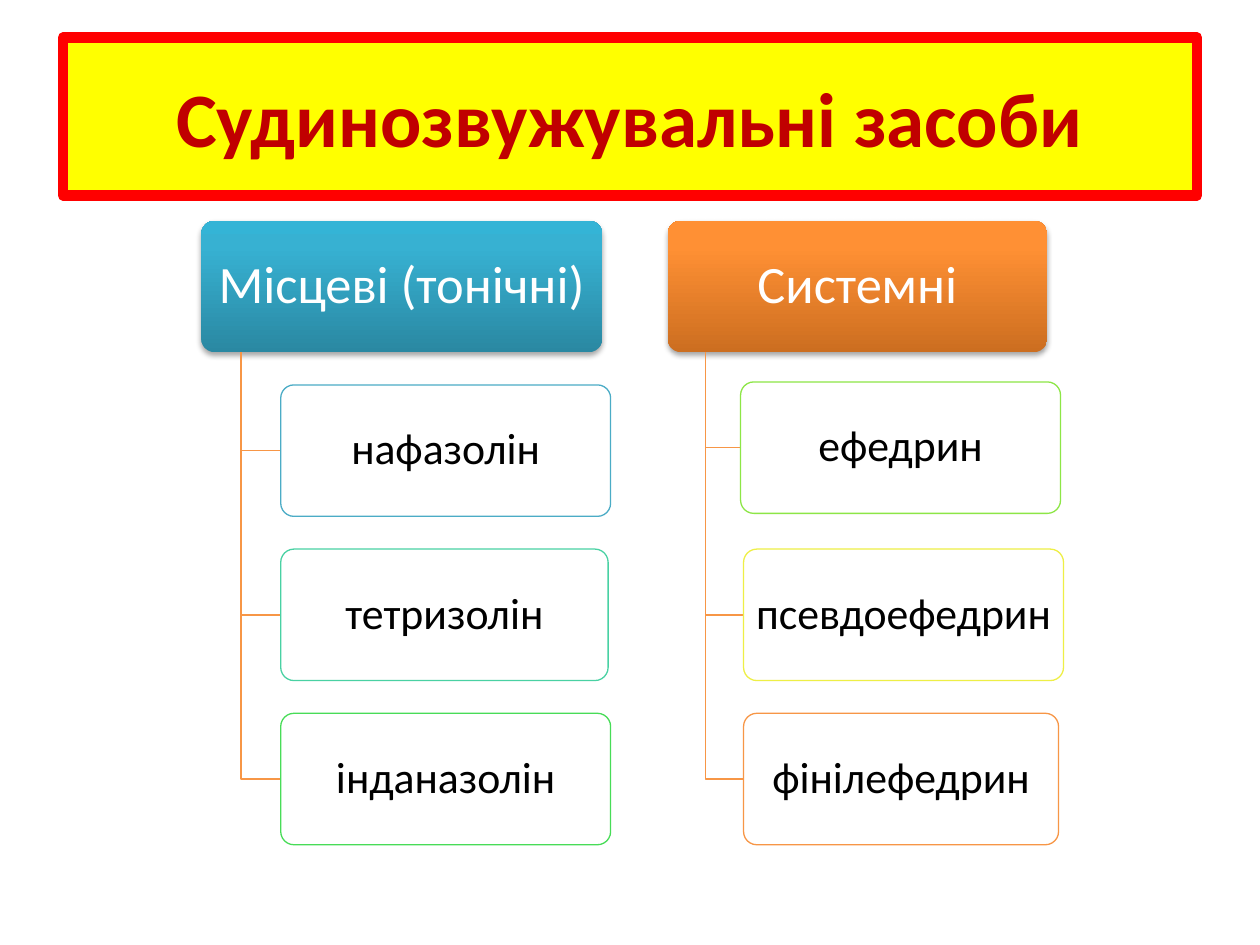
import copy

import pptx
import pptx.dml.color
import pptx.enum.shapes
import pptx.enum.text
import pptx.oxml
import pptx.oxml.ns
import pptx.util
from pptx.util import Cm, Pt

COLORS = {
    "title fill": "FFFF00", "title line": "FF0000", "title text": "C00000",
    "white": "FFFFFF", "black": "000000", "branch": "F79646",
}
HEAD_TOP, BOX_HEIGHT, PITCH = 4.45, 2.65, 3.31

# Child rows: name, outline, left, width, vertical shift
GROUPS = [
    {"name": "Місцеві (тонічні)", "left": 4.06, "width": 8.08, "trunk": 4.86,
     "gradient": [(0, "2A88A2"), (0.8, "37B1D2"), (1, "34B4D6")],
     "children": [("нафазолін", "4BACC6", 5.66, 6.65, 0),
                  ("тетризолін", "49D1A3", 5.66, 6.6, 0),
                  ("інданазолін", "47DC57", 5.66, 6.65, 0)]},
    {"name": "Системні", "left": 13.46, "width": 7.65, "trunk": 14.22,
     "gradient": [(0, "CC6E20"), (0.8, "FF9034"), (1, "FF9136")],
     "children": [("ефедрин", "8DE646", 14.93, 6.45, -0.06),
                  ("псевдоефедрин", "EEEF46", 14.99, 6.45, 0),
                  ("фінілефедрин", "F79646", 14.99, 6.35, 0)]},
]
SHADOW = (
    '<a:outerShdw xmlns:a="http://schemas.openxmlformats.org/drawingml/2006/main"'
    ' blurRad="40000" dist="23000" dir="5400000" rotWithShape="0">'
    '<a:srgbClr val="000000"><a:alpha val="35000"/></a:srgbClr></a:outerShdw>'
)


def write_text(shape, text, size, color, bold=False):
    frame = shape.text_frame
    frame.vertical_anchor = pptx.enum.text.MSO_ANCHOR.MIDDLE
    para = frame.paragraphs[0]
    para.alignment = pptx.enum.text.PP_ALIGN.CENTER
    span = para.add_run()
    span.text = text
    for name, value in {"name": "Calibri", "size": Pt(size), "bold": bold}.items():
        setattr(span.font, name, value)
    span.font.color.rgb = pptx.dml.color.RGBColor.from_string(color)
    return frame


def add_box(page, text, left, top, width, size, color, insets):
    """Add a rounded box with centred text; the caller sets fill and line."""
    box = page.shapes.add_shape(
        pptx.enum.shapes.MSO_SHAPE.ROUNDED_RECTANGLE,
        Cm(left), Cm(top), Cm(width), Cm(BOX_HEIGHT))
    box.adjustments[0] = 0.1
    box.shadow.inherit = False
    frame = write_text(box, text, size, color)
    across, down = insets
    margins = {"margin_left": across, "margin_right": across,
               "margin_top": down, "margin_bottom": down}
    for name, value in margins.items():
        setattr(frame, name, Cm(value))
    frame.word_wrap = False
    frame.paragraphs[0].line_spacing = 0.9
    return box


rgb = pptx.dml.color.RGBColor.from_string
qn = pptx.oxml.ns.qn

deck = pptx.Presentation()
deck.slide_width, deck.slide_height = Cm(25.4), Cm(19.05)
page = deck.slides.add_slide(deck.slide_layouts[5])

title = page.shapes.title
position = {"left": 1.27, "top": 0.76, "width": 22.86, "height": 3.18}
for name, value in position.items():
    setattr(title, name, Cm(value))
title.fill.solid()
title.fill.fore_color.rgb = rgb(COLORS["title fill"])
title.line.color.rgb = rgb(COLORS["title line"])
title.line.width = Pt(6)
write_text(title, "Судинозвужувальні засоби", 44, COLORS["title text"], bold=True)

for group in GROUPS:
    head = add_box(page, group["name"], group["left"], HEAD_TOP, group["width"],
                   30, COLORS["white"], (0.15, 0.1))
    head.line.fill.background()
    head.fill.gradient()
    head.fill.gradient_angle = 90
    properties = head._element.spPr
    stop_list = properties.find(".//" + qn("a:gsLst"))
    stop_list.append(copy.deepcopy(stop_list[-1]))
    for stop, (place, color) in zip(head.fill.gradient_stops, group["gradient"]):
        stop.position = place
        stop.color.rgb = rgb(color)
    properties.find(qn("a:effectLst")).append(pptx.oxml.parse_xml(SHADOW))

    for row, (name, outline, left, width, shift) in enumerate(group["children"], 1):
        top = HEAD_TOP + row * PITCH + shift
        middle = Cm(top + BOX_HEIGHT / 2)
        trunk = Cm(group["trunk"])
        builder = page.shapes.build_freeform(trunk, Cm(HEAD_TOP + BOX_HEIGHT))
        builder.add_line_segments([(trunk, middle), (Cm(left), middle)], close=False)
        branch = builder.convert_to_shape()
        branch.shadow.inherit = False
        branch.fill.background()
        branch.line.color.rgb = rgb(COLORS["branch"])
        branch.line.width = Pt(0.75)

        child = add_box(page, name, left, top, width, 25, COLORS["black"], (0.13, 0.08))
        child.fill.solid()
        child.fill.fore_color.rgb = rgb(COLORS["white"])
        white = child._element.spPr.find(qn("a:solidFill"))[0]
        white.append(white.makeelement(qn("a:alpha"), {"val": "90000"}))
        child.line.color.rgb = rgb(outline)
        child.line.width = Pt(0.75)

deck.save("out.pptx")
